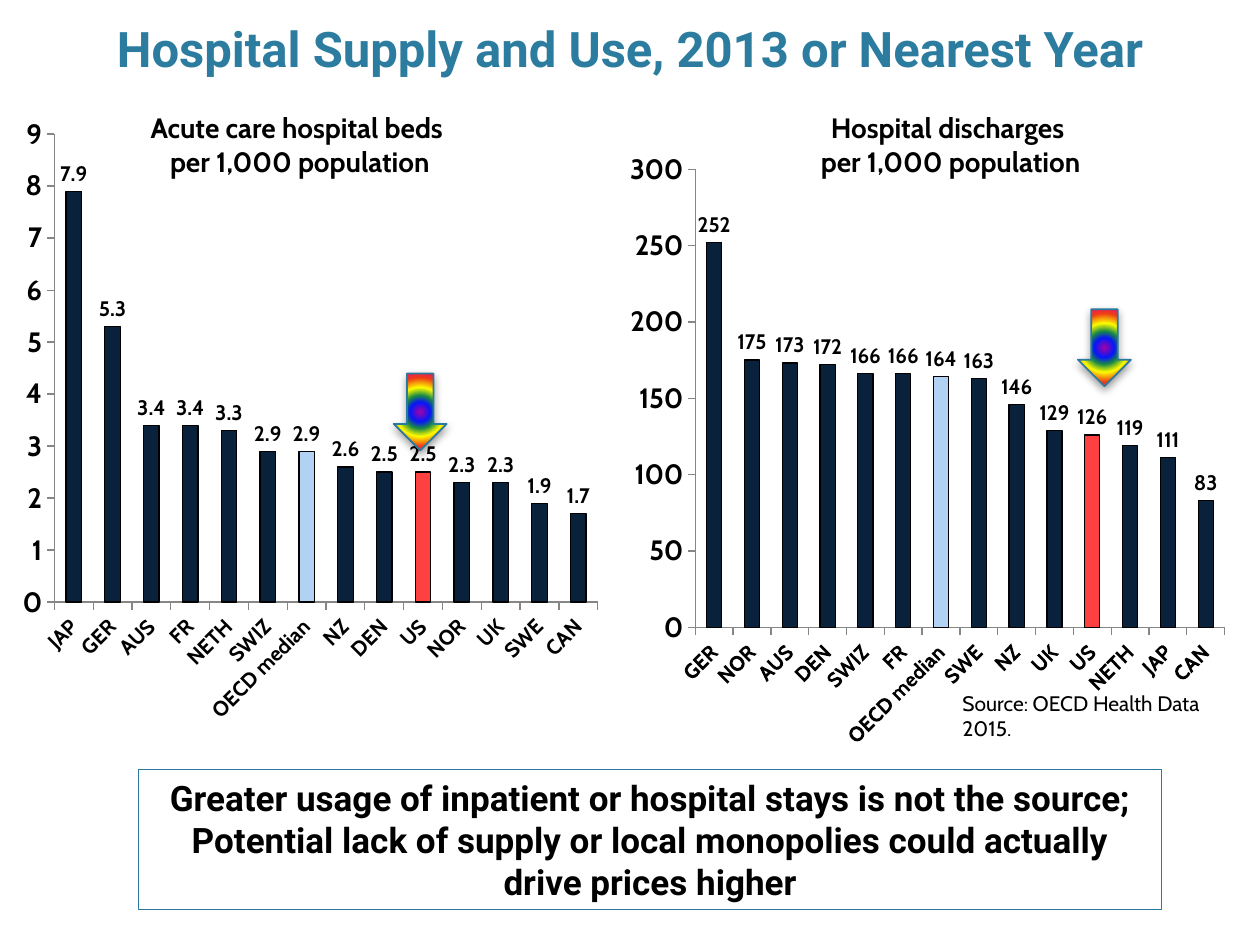
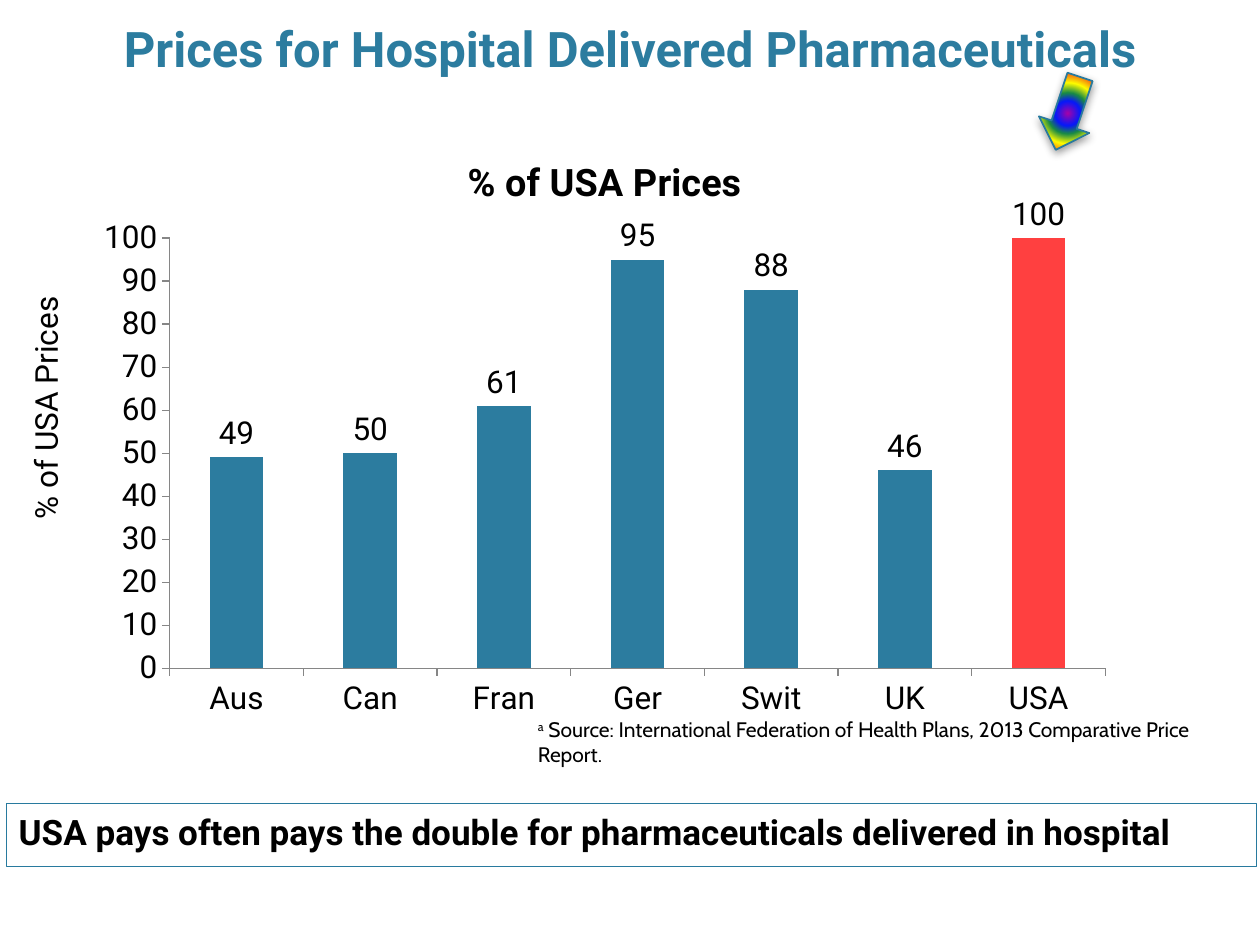
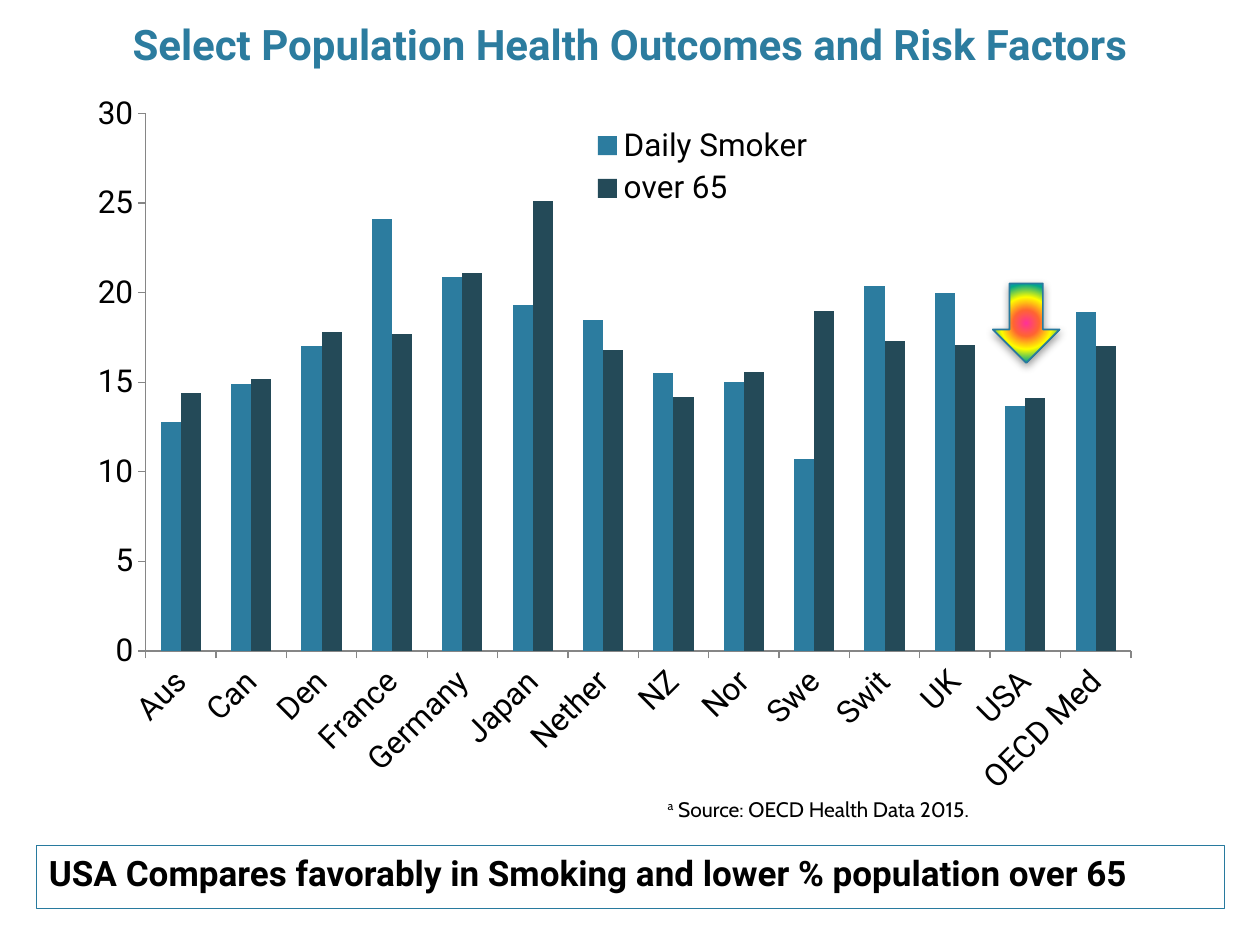
from dataclasses import dataclass

from lxml import etree
from pptx import Presentation
from pptx.chart.data import CategoryChartData
from pptx.dml.color import RGBColor
from pptx.enum.chart import XL_CHART_TYPE, XL_LABEL_POSITION, XL_LEGEND_POSITION, XL_TICK_MARK
from pptx.enum.shapes import MSO_SHAPE
from pptx.enum.text import MSO_ANCHOR, MSO_AUTO_SIZE, PP_ALIGN
from pptx.oxml import parse_xml
from pptx.oxml.ns import nsdecls, qn
from pptx.util import Inches, Pt

CELL = 0.1
HEADING, BODY = "Roboto", "Cabin"
BLACK, TEAL, EDGE, AXIS = "000000", "2C7C9F", "287A9E", "868686"
NAVY, PALE, RED, SLATE = "09213B", "B2D2F3", "FF4040", "244A58"
RAINBOW = [(0, "A603AB"), (21, "0819FB"), (35, "1A8D48"), (52, "FFFF00"),
           (73, "EE3F17"), (88, "E81766"), (100, "A603AB")]
SUNSET = [(0, "FF3399"), (25, "FF6633"), (50, "FFFF00"), (75, "01A78F"), (100, "3366FF")]


@dataclass
class Box:
    """An area measured in grid cells of a 100 by 75 slide."""
    column: float
    row: float
    columns: float
    rows: float

    def inner(self, column, row, columns, rows):
        """Return an area offset from this one's corner."""
        return Box(self.column + column, self.row + row, columns, rows)

    def lengths(self):
        """Return left, top, width and height for a shape."""
        return [Inches(round(cells * CELL, 2))
                for cells in (self.column, self.row, self.columns, self.rows)]


def color(value):
    """Turn a hex string into a colour."""
    return RGBColor.from_string(value)


def style_font(font, size, name=HEADING, bold=False, shade=BLACK):
    """Set the face, size, weight and colour of a font."""
    font.name, font.size, font.bold = name, Pt(size), bold
    font.color.rgb = color(shade)


def add_title(page, text, rows=5, size=28):
    """Move and format the title placeholder."""
    title = page.shapes.title
    title.left, title.top, title.width, title.height = Box(0, 1, 100, rows).lengths()
    frame = title.text_frame
    frame.auto_size, frame.vertical_anchor = MSO_AUTO_SIZE.NONE, MSO_ANCHOR.TOP
    para = frame.paragraphs[0]
    para.text, para.alignment = text, PP_ALIGN.CENTER
    style_font(para.font, size, bold=True, shade=TEAL)


def add_text(page, box, text, size, name=BODY, bold=False, align=PP_ALIGN.LEFT):
    """Add a wrapped text box and return it."""
    label = page.shapes.add_textbox(*box.lengths())
    label.text_frame.word_wrap = True
    para = label.text_frame.paragraphs[0]
    para.text, para.alignment = text, align
    style_font(para.font, size, name, bold)
    return label


def add_source(page, box, text, mark=""):
    """Add a source note, led by a raised mark if there is one."""
    para = add_text(page, box, mark, 12).text_frame.paragraphs[0]
    for raised in para.runs:
        raised._r.get_or_add_rPr().set("baseline", "30000")
    para.add_run().text = text


def add_callout(page, box, text, align=PP_ALIGN.LEFT):
    """Add the outlined box holding the slide's message."""
    callout = page.shapes.add_shape(MSO_SHAPE.RECTANGLE, *box.lengths())
    callout.shadow.inherit = False
    callout.fill.background()
    callout.line.color.rgb, callout.line.width = color(EDGE), Pt(0.75)
    frame = callout.text_frame
    frame.word_wrap, frame.vertical_anchor = True, MSO_ANCHOR.TOP
    para = frame.paragraphs[0]
    para.text, para.alignment, para.space_before = text, align, Pt(6)
    style_font(para.font, 20, bold=True)


def add_pointer(page, box, kind=MSO_SHAPE.RIGHT_ARROW, rotation=90, stops=RAINBOW):
    """Add a glowing arrow with a radial gradient and a soft shadow."""
    arrow = page.shapes.add_shape(kind, *box.lengths())
    arrow.rotation = rotation
    arrow.line.color.rgb, arrow.line.width = color(EDGE), Pt(1)
    arrow.shadow.inherit = False
    marks = "".join(f'<a:gs pos="{share * 1000}"><a:srgbClr val="{shade}"/></a:gs>'
                    for share, shade in stops)
    properties = arrow.element.spPr
    properties.find(qn("a:prstGeom")).addnext(parse_xml(
        f'<a:gradFill {nsdecls("a")} rotWithShape="1"><a:gsLst>{marks}</a:gsLst>'
        '<a:path path="circle"><a:fillToRect l="50000" t="50000" r="50000" b="50000"/>'
        '</a:path></a:gradFill>'))
    properties.find(qn("a:effectLst")).append(parse_xml(
        f'<a:outerShdw {nsdecls("a")} blurRad="{Pt(5)}" dist="{Pt(2)}" dir="5400000" '
        'rotWithShape="0"><a:srgbClr val="000000"><a:alpha val="40000"/></a:srgbClr>'
        '</a:outerShdw>'))


def set_layout(parent, index, shares, inner=False):
    """Fix the place of a chart element as shares of the chart."""
    for old in parent.findall(qn("c:layout")):
        parent.remove(old)
    layout = parse_xml(f'<c:layout {nsdecls("c")}><c:manualLayout/></c:layout>')
    values = [("xMode", "edge"), ("yMode", "edge"), *zip("xywh", shares)]
    if inner:
        values.insert(0, ("layoutTarget", "inner"))
    for tag, value in values:
        etree.SubElement(layout[0], qn(f"c:{tag}")).set("val", str(value))
    parent.insert(index, layout)


def style_axis(axis, size, name, bold):
    """Give an axis its font, line and outward ticks without gridlines."""
    style_font(axis.tick_labels.font, size, name, bold)
    axis.has_major_gridlines = False
    axis.major_tick_mark, axis.minor_tick_mark = XL_TICK_MARK.OUTSIDE, XL_TICK_MARK.NONE
    axis.format.line.color.rgb, axis.format.line.width = color(AXIS), Pt(0.75)


def add_columns(page, box, categories, series, top, step, plot_shares,
                name=HEADING, sizes=(18, 18), bold=False, slanted=True):
    """Add a clustered column chart from (name, colour, values) series."""
    data = CategoryChartData()
    data.categories = categories
    for label, _, values in series:
        data.add_series(label, values)
    chart = page.shapes.add_chart(XL_CHART_TYPE.COLUMN_CLUSTERED, *box.lengths(), data).chart
    style_font(chart.font, 18)
    chart.has_title = chart.has_legend = False
    style_axis(chart.category_axis, sizes[0], name, bold)
    style_axis(chart.value_axis, sizes[1], name, bold)
    chart.value_axis.minimum_scale, chart.value_axis.maximum_scale = 0, top
    chart.value_axis.major_unit = step
    chart.value_axis.tick_labels.number_format = "General"
    chart.value_axis.tick_labels.number_format_is_linked = False
    if slanted:
        chart.element.xpath(".//c:catAx/c:txPr/a:bodyPr")[0].set("rot", "-2700000")
    plot = chart.plots[0]
    plot.gap_width, plot.overlap, plot.vary_by_categories = 150, 0, False
    for column_set, (_, shade, _) in zip(plot.series, series):
        column_set.invert_if_negative = False
        column_set.format.fill.solid()
        column_set.format.fill.fore_color.rgb = color(shade)
    set_layout(chart.element.xpath(".//c:plotArea")[0], 0, plot_shares, inner=True)
    return chart


def add_value_labels(chart, size, name, bold, number_format):
    """Show each value above its column."""
    labels = chart.plots[0].series[0].data_labels
    labels.show_value, labels.position = True, XL_LABEL_POSITION.OUTSIDE_END
    labels.number_format, labels.number_format_is_linked = number_format, False
    style_font(labels.font, size, name, bold)


def recolor(chart, highlights, outlined=False):
    """Fill single columns with the colours given by category name."""
    column_set = chart.plots[0].series[0]
    formats = [column_set.format]
    for index, category in enumerate(chart.plots[0].categories):
        if category in highlights:
            point = column_set.points[index].format
            point.fill.solid()
            point.fill.fore_color.rgb = color(highlights[category])
            formats.append(point)
    for item in formats if outlined else []:
        item.line.color.rgb, item.line.width = color(BLACK), Pt(0.75)


def add_country_panel(page, box, caption, caption_box, pointer_box, categories, values,
                      top, step, plot_shares, number_format):
    """Add a country chart with its caption and the arrow to the US column."""
    chart = add_columns(page, box, categories, [("Series 1", NAVY, values)], top, step,
                        plot_shares, BODY, (12, 16), True)
    recolor(chart, {"OECD median": PALE, "US": RED}, outlined=True)
    add_value_labels(chart, 12, BODY, True, number_format)
    add_text(page, box.inner(*caption_box), caption, 16, bold=True, align=PP_ALIGN.CENTER)
    add_pointer(page, box.inner(*pointer_box))


def build_hospital_use(page):
    """Compare hospital beds and discharges by country."""
    add_title(page, "Hospital Supply and Use, 2013 or Nearest Year")
    add_country_panel(
        page, Box(0.8, 8.3, 47.5, 50), "Acute care hospital beds \nper 1,000 population",
        (0.9, 0, 44.2, 6.4), (29.5, 22.3, 6.1, 4.2),
        ["JAP", "GER", "AUS", "FR", "NETH", "SWIZ", "OECD median", "NZ", "DEN", "US",
         "NOR", "UK", "SWE", "CAN"],
        [7.9, 5.3, 3.4, 3.4, 3.3, 2.9, 2.9, 2.6, 2.5, 2.5, 2.3, 2.3, 1.9, 1.7],
        9, 1, (0.074, 0.047, 0.908, 0.743), "#,##0.0")
    add_country_panel(
        page, Box(50, 11.5, 48.3, 50.8), "Hospital discharges \nper 1,000 population",
        (1.7, -3.2, 47.5, 6.4), (34.6, 14, 6.1, 4.2),
        ["GER", "NOR", "AUS", "DEN", "SWIZ", "FR", "OECD median", "SWE", "NZ", "UK",
         "US", "NETH", "JAP", "CAN"],
        [252, 175, 173, 172, 166, 166, 164, 163, 146, 129, 126, 119, 111, 83],
        300, 50, (0.095, 0.038, 0.882, 0.716), "#,##0")
    add_source(page, Box(75.4, 54.3, 22.1, 5), "Source: OECD Health Data 2015.")
    add_callout(page, Box(11, 61.1, 81.2, 11.1),
                "Greater usage of inpatient or hospital stays is not the source; Potential "
                "lack of supply or local monopolies could actually drive prices higher",
                PP_ALIGN.CENTER)


def build_drug_prices(page):
    """Compare hospital drug prices with those in the USA."""
    add_title(page, "Prices for Hospital Delivered Pharmaceuticals", rows=8)
    measure = "% of USA Prices"
    box = Box(6.6, 10.4, 82.8, 47.5)
    chart = add_columns(page, box, ["Aus", "Can", "Fran", "Ger", "Swit", "UK", "USA"],
                        [("Series 1", TEAL, [49, 50, 61, 95, 88, 46, 100])], 100, 10,
                        (0.083, 0.179, 0.897, 0.719), slanted=False)
    recolor(chart, {"USA": RED})
    add_value_labels(chart, 18, HEADING, False, "General")
    chart.has_title = True
    heading = chart.chart_title.text_frame.paragraphs[0]
    heading.text = measure
    style_font(heading.font, 21.6, bold=True)
    chart.chart_title.include_in_layout = False
    axis_label = add_text(page, box.inner(-11.7, 15.1, 23.4, 10), measure, 18, HEADING)
    axis_label.rotation = 270
    axis_label.text_frame.paragraphs[0].space_before = Pt(6)
    add_pointer(page, box.inner(75.1, -3.5, 6.1, 4.2), rotation=108.4)
    add_source(page, Box(41.7, 56.4, 56.6, 3),
               " Source: International Federation of Health Plans, 2013 Comparative Price Report.",
               "a")
    add_callout(page, Box(0.5, 63.8, 99.2, 5),
                "USA pays often pays the double for pharmaceuticals delivered in hospital")


def build_risk_factors(page):
    """Compare smoking and age by country."""
    add_title(page, "Select Population Health Outcomes and Risk Factors", size=24)
    box = Box(5.7, 6.6, 90.2, 60.5)
    smokers = [12.8, 14.9, 17, 24.1, 20.9, 19.3, 18.5, 15.5, 15, 10.7, 20.4, 20, 13.7, 18.9]
    seniors = [14.4, 15.2, 17.8, 17.7, 21.1, 25.1, 16.8, 14.2, 15.6, 19, 17.3, 17.1, 14.1, 17]
    chart = add_columns(
        page, box,
        ["Aus", "Can", "Den", "France", "Germany", "Japan", "Nether", "NZ", "Nor", "Swe",
         "Swit", "UK", "USA", "OECD Med"],
        [("Daily Smoker", TEAL, smokers), ("over 65", SLATE, seniors)], 30, 5,
        (0.065, 0.04, 0.867, 0.705))
    chart.has_legend = True
    chart.legend.position = XL_LEGEND_POSITION.RIGHT
    chart.legend.include_in_layout = False
    style_font(chart.legend.font, 18)
    set_layout(chart.element.xpath(".//c:legend")[0], 1, (0.45, 0.05, 0.21, 0.12))
    add_pointer(page, box.inner(73.1, 15.9, 5.3, 6.3), MSO_SHAPE.DOWN_ARROW, 0, SUNSET)
    add_source(page, Box(52, 62.7, 26.8, 3), " Source: OECD Health Data 2015.", "a")
    add_callout(page, Box(2.9, 67.1, 94.3, 5),
                "USA Compares favorably in Smoking and lower % population over 65")


def main():
    """Build the deck and save it."""
    deck = Presentation()
    deck.slide_width, deck.slide_height = Inches(10), Inches(7.5)
    for build in (build_hospital_use, build_drug_prices, build_risk_factors):
        build(deck.slides.add_slide(deck.slide_layouts[5]))
    deck.save("out.pptx")


if __name__ == "__main__":
    main()
